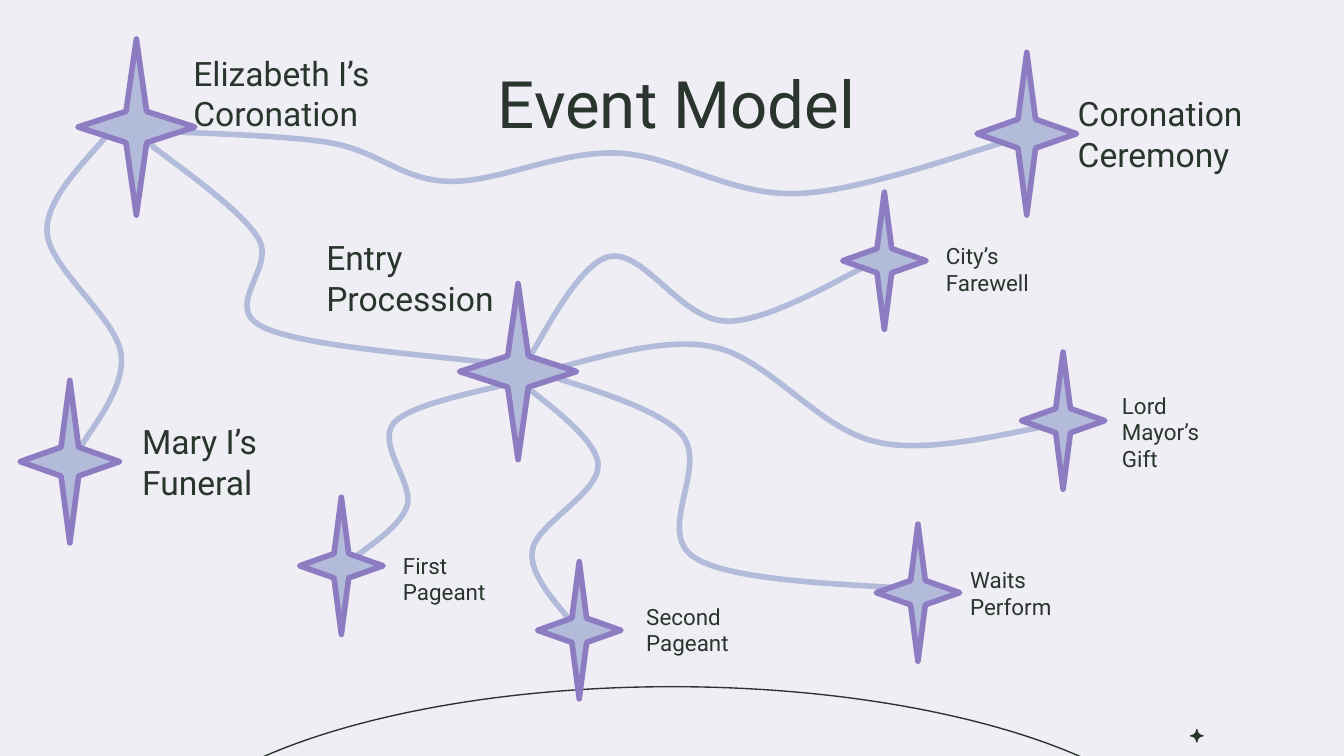
from dataclasses import dataclass
from typing import NamedTuple

from lxml.etree import SubElement
from pptx import Presentation
from pptx.dml.color import RGBColor
from pptx.enum.shapes import MSO_SHAPE as Preset
from pptx.enum.text import MSO_ANCHOR as Anchor, PP_ALIGN as Align
from pptx.oxml.ns import qn
from pptx.shapes.base import BaseShape
from pptx.slide import Slide
from pptx.util import Pt

PX = 9144


@dataclass(frozen=True)
class Theme:
    background: RGBColor = RGBColor.from_string("EFEEF4")
    ink: RGBColor = RGBColor.from_string("2A362D")
    pale: RGBColor = RGBColor.from_string("B2BBDA")
    violet: RGBColor = RGBColor.from_string("8E7CC3")
    font: str = "Roboto"
    title_size: int = 35
    event_size: int = 18
    detail_size: int = 12
    thick: float = 3
    thin: float = 0.75


class Box(NamedTuple):
    left: int
    top: int
    width: int
    height: int

    def emu(self) -> list[int]:
        return [value * PX for value in self]


class Label(NamedTuple):
    lines: tuple[str, ...]
    box: Box
    size: int
    align: Align = Align.LEFT
    anchor: Anchor = Anchor.MIDDLE


class Point(NamedTuple):
    x: int
    y: int


class Bend(NamedTuple):
    leave: Point
    arrive: Point
    end: Point


class Thread(NamedTuple):
    start: Point
    bends: tuple[Bend, ...]


class Star(NamedTuple):
    left: int
    top: int
    size: tuple[int, int]


def thread(start: tuple[int, int], *bends: tuple[int, ...]) -> Thread:
    return Thread(Point(*start), tuple(
        Bend(Point(*bend[:2]), Point(*bend[2:4]), Point(*bend[4:])) for bend in bends))


THEME = Theme()
HUB, EVENT, DETAIL = (87, 131), (74, 121), (62, 102)

THREADS = [
    thread((400, 277), (421, 274, 488, 249, 530, 258), (572, 266, 609, 320, 653, 329),
           (696, 339, 769, 317, 792, 315)),
    thread((388, 273), (408, 281, 485, 299, 507, 323), (528, 347, 487, 396, 517, 415),
           (547, 435, 657, 435, 685, 439)),
    thread((383, 280), (393, 291, 443, 323, 445, 345), (447, 367, 398, 390, 396, 410),
           (393, 431, 424, 459, 430, 469)),
    thread((388, 275), (399, 261, 428, 197, 453, 191), (479, 185, 507, 239, 541, 239),
           (574, 240, 637, 200, 657, 192)),
    thread((110, 97), (132, 99, 207, 100, 244, 106), (282, 112, 298, 134, 334, 135),
           (370, 136, 416, 112, 460, 114), (503, 116, 543, 146, 594, 144),
           (645, 142, 735, 108, 764, 101)),
    thread((79, 101), (71, 113, 33, 146, 35, 173), (37, 200, 86, 236, 90, 263),
           (94, 290, 65, 322, 60, 333)),
    thread((110, 106), (124, 118, 178, 154, 192, 177), (206, 199, 165, 228, 195, 243),
           (225, 259, 343, 266, 372, 271)),
    thread((380, 285), (365, 290, 305, 300, 293, 315), (280, 330, 308, 360, 303, 376),
           (298, 393, 270, 409, 264, 415)),
]

LABELS = [
    Label(("Entry Procession",), Box(233, 180, 150, 53), THEME.event_size),
    Label(("Elizabeth I’s Coronation",), Box(134, 43, 208, 53), THEME.event_size),
    Label(("Mary I’s Funeral",), Box(96, 317, 150, 53), THEME.event_size),
    Label(("Coronation Ceremony",), Box(792, 73, 208, 53), THEME.event_size),
    Label(("First", "Pageant"), Box(290, 404, 125, 53), THEME.detail_size),
    Label(("Event Model",), Box(82, 37, 843, 63), THEME.title_size,
          Align.CENTER, Anchor.TOP),
    Label(("Second", "Pageant"), Box(471, 442, 125, 53), THEME.detail_size),
    Label(("Waits Perform",), Box(712, 415, 124, 53), THEME.detail_size),
    Label(("Lord Mayor’s Gift",), Box(825, 295, 100, 53), THEME.detail_size),
    Label(("City’s Farewell",), Box(694, 174, 124, 53), THEME.detail_size),
]

STARS = [
    Star(58, 29, HUB), Star(15, 283, EVENT), Star(727, 39, EVENT), Star(342, 211, HUB),
    Star(223, 370, DETAIL), Star(400, 418, DETAIL), Star(760, 262, DETAIL),
    Star(627, 143, DETAIL), Star(652, 390, DETAIL),
]


def paint(shape: BaseShape, fill: RGBColor | None, line: RGBColor, weight: float) -> None:
    shape.shadow.inherit = False
    if fill is None:
        shape.fill.background()
    else:
        shape.fill.solid()
        shape.fill.fore_color.rgb = fill
    shape.line.color.rgb = line
    shape.line.width = Pt(weight)


def draw_preset(slide: Slide, preset: Preset, box: Box, fill: RGBColor | None,
                line: RGBColor, weight: float, adjustment: float | None = None) -> None:
    shape = slide.shapes.add_shape(preset, *box.emu())
    if adjustment is not None:
        shape.adjustments[0] = adjustment
    paint(shape, fill, line, weight)


def draw_thread(slide: Slide, curve: Thread) -> None:
    ends = [bend.end for bend in curve.bends]
    builder = slide.shapes.build_freeform(*curve.start, scale=PX)
    builder.add_line_segments(ends, close=False)
    shape = builder.convert_to_shape()
    left = min(point.x for point in [curve.start, *ends])
    top = min(point.y for point in [curve.start, *ends])
    segments = list(shape.element.iter(qn("a:lnTo")))
    for segment, bend in zip(segments, curve.bends):
        segment.clear()
        segment.tag = qn("a:cubicBezTo")
        for point in bend:
            SubElement(segment, qn("a:pt"), x=str(point.x - left), y=str(point.y - top))
    paint(shape, None, THEME.pale, THEME.thick)


def draw_label(slide: Slide, label: Label) -> None:
    frame = slide.shapes.add_textbox(*label.box.emu()).text_frame
    frame.word_wrap = True
    frame.vertical_anchor = label.anchor
    frame.margin_left = frame.margin_right = 10 * PX
    frame.margin_top = frame.margin_bottom = 10 * PX
    frame.text = "\n".join(label.lines)
    for paragraph in frame.paragraphs:
        paragraph.alignment = label.align
        paragraph.font.name = THEME.font
        paragraph.font.size = Pt(label.size)
        paragraph.font.color.rgb = THEME.ink


def main() -> None:
    presentation = Presentation()
    presentation.slide_width = 1000 * PX
    presentation.slide_height = presentation.slide_width * 9 // 16
    slide = presentation.slides.add_slide(presentation.slide_layouts[6])
    slide.background.fill.solid()
    slide.background.fill.fore_color.rgb = THEME.background

    draw_preset(slide, Preset.OVAL, Box(105, 511, 790, 288), None, THEME.ink, THEME.thin)
    draw_preset(slide, Preset.PLAQUE, Box(886, 543, 9, 9), THEME.ink, THEME.ink,
                THEME.thin, 0.5)
    for curve in THREADS:
        draw_thread(slide, curve)
    for label in LABELS:
        draw_label(slide, label)
    for star in STARS:
        draw_preset(slide, Preset.STAR_4_POINT, Box(star.left, star.top, *star.size),
                    THEME.pale, THEME.violet, THEME.thick, 0.125)
    presentation.save("out.pptx")


if __name__ == "__main__":
    main()
